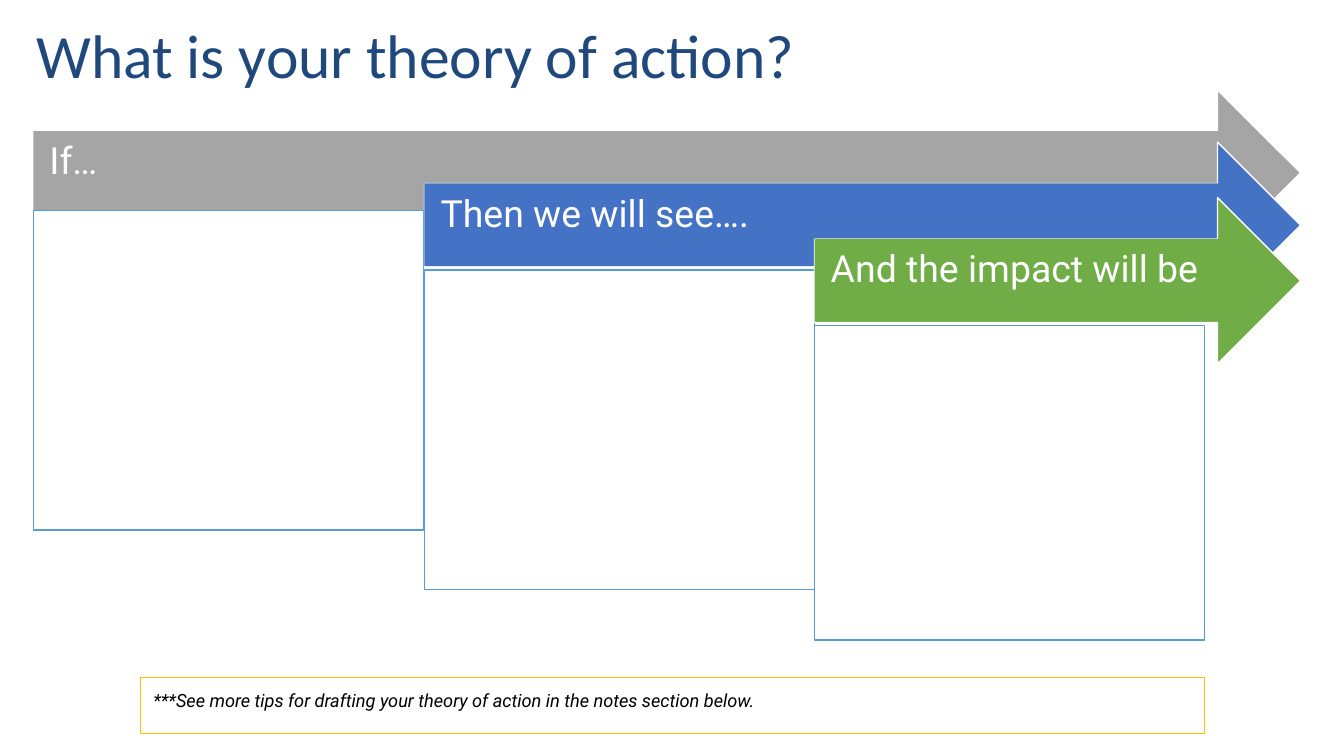
from lxml.etree import SubElement
from pptx import Presentation
from pptx.dml.color import RGBColor
from pptx.enum.shapes import MSO_SHAPE as Shape
from pptx.enum.text import MSO_ANCHOR as Anchor, PP_ALIGN as Align
from pptx.oxml.ns import qn
from pptx.util import Inches, Pt

RIGHT_EDGE = 12.9
BAND_RIGHT = 12.45
BOX_WIDTH = 3.87
STEPS = [
    ("If…", "A5A5A5", 0.33, 0.89, 2.09, 3.17),
    ("Then we will see….", "4472C4", 4.21, 1.41, 2.68, 3.17),
    ("And the impact will be", "70AD47", 8.08, 1.96, 3.23, 3.12),
]


def color(value):
    """Turn a hex string into a colour."""
    return RGBColor.from_string(value)


def write(frame, text, size, font="Roboto", fill="FFFFFF", italic=False, spacing=None):
    """Write one left-aligned paragraph into a text frame."""
    paragraph = frame.paragraphs[0]
    paragraph.alignment = Align.LEFT
    paragraph.line_spacing = spacing
    run = paragraph.add_run()
    run.text = text
    run.font.size = Pt(size)
    run.font.name = font
    run.font.italic = italic
    run.font.color.rgb = color(fill)


def set_margins(target, left, top, right, bottom):
    """Set the inner margins of a text frame or a cell."""
    target.margin_left, target.margin_top = Inches(left), Inches(top)
    target.margin_right, target.margin_bottom = Inches(right), Inches(bottom)


def add_block(slide, kind, left, top, width, height, fill, line=None):
    """Add a filled shape with an optional outline."""
    shape = slide.shapes.add_shape(
        kind, Inches(left), Inches(top), Inches(width), Inches(height))
    shape.shadow.inherit = False
    shape.fill.solid()
    shape.fill.fore_color.rgb = color(fill)
    if line:
        shape.line.color.rgb = color(line)
        shape.line.width = Pt(1)
    else:
        shape.line.fill.background()
    return shape


def add_title(slide, text):
    """Add the slide title."""
    box = slide.shapes.add_textbox(
        Inches(0.23), Inches(0.12), Inches(12.77), Inches(0.72))
    frame = box.text_frame
    frame.word_wrap = True
    set_margins(frame, 0.13, 0.13, 0.13, 0.13)
    write(frame, text, 44, font="Calibri", fill="1F497D", spacing=0.9)


def add_step(slide, text, fill, left, top, box_top, box_height):
    """Add an arrow with its label band and the empty box below."""
    add_block(slide, Shape.RIGHT_ARROW, left, top, RIGHT_EDGE - left, 1.65, fill, "FFFFFF")
    band = add_block(slide, Shape.RECTANGLE, left, top + 0.41, BAND_RIGHT - left, 0.82, fill)
    frame = band.text_frame
    frame.word_wrap = True
    frame.vertical_anchor = Anchor.MIDDLE
    set_margins(frame, 0.16, 0.16, 0.37, 0.35)
    write(frame, text, 26.7, spacing=0.9)
    add_block(slide, Shape.RECTANGLE, left, box_top, BOX_WIDTH, box_height, "FFFFFF", "599BD5")


def set_borders(cell, line, width):
    """Draw the four borders of a table cell."""
    properties = cell._tc.get_or_add_tcPr()
    for index, side in enumerate(("a:lnL", "a:lnR", "a:lnT", "a:lnB")):
        border = SubElement(properties, qn(side), w=str(Pt(width)))
        solid = SubElement(border, qn("a:solidFill"))
        SubElement(solid, qn("a:srgbClr"), val=line)
        properties.insert(index, border)


def add_tip(slide, text):
    """Add the one-cell table with the tip."""
    table = slide.shapes.add_table(
        1, 1, Inches(1.39), Inches(6.72), Inches(10.56), Inches(0.56)).table
    table.first_row = table.horz_banding = False
    cell = table.cell(0, 0)
    cell.fill.background()
    set_margins(cell, 0.13, 0.13, 0.13, 0.13)
    set_borders(cell, "FFC000", 0.75)
    write(cell.text_frame, text, 13, fill="000000", italic=True)


def main():
    """Build the theory of action slide."""
    presentation = Presentation()
    presentation.slide_width = Inches(13.33)
    presentation.slide_height = Inches(7.5)
    slide = presentation.slides.add_slide(presentation.slide_layouts[6])
    add_title(slide, "What is your theory of action?")
    for step in STEPS:
        add_step(slide, *step)
    add_tip(slide, "***See more tips for drafting your theory of action in the notes section below.")
    presentation.save("out.pptx")


if __name__ == "__main__":
    main()
